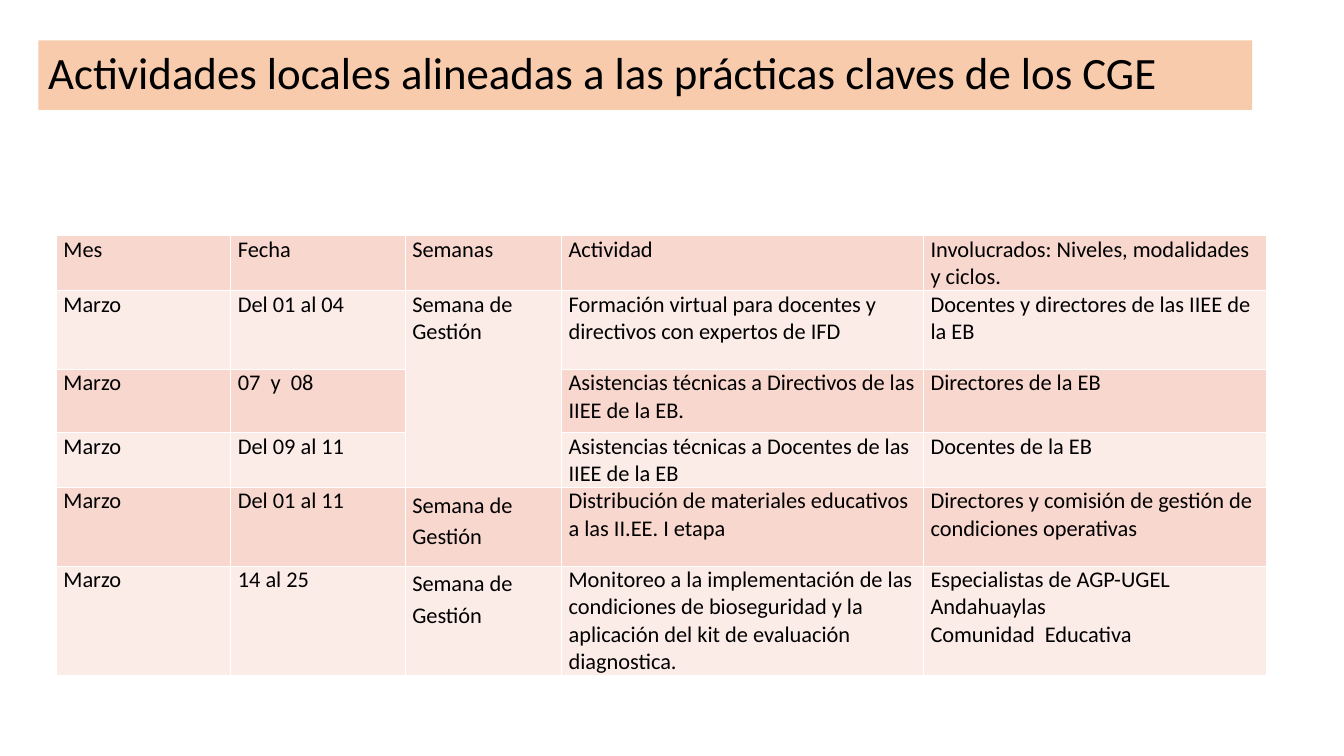
from dataclasses import dataclass

from lxml.etree import SubElement
from pptx import Presentation
from pptx.dml.color import RGBColor as RGB
from pptx.enum.shapes import MSO_SHAPE as Shape
from pptx.enum.text import MSO_ANCHOR as Anchor, PP_ALIGN as Align
from pptx.oxml.ns import qn
from pptx.slide import Slide
from pptx.table import _Cell as Cell
from pptx.text.text import TextFrame as Frame
from pptx.util import Inches, Pt

BLACK = RGB(0x00, 0x00, 0x00)
WHITE = RGB(0xFF, 0xFF, 0xFF)
PEACH = RGB(0xF8, 0xCB, 0xAD)
ROSE = RGB(0xF8, 0xD7, 0xCE)
PALE = RGB(0xFC, 0xEC, 0xE8)
FONT = "Calibri"
WIDTHS = (1.73, 1.73, 1.55, 3.59, 3.4)
WEEK = 2


@dataclass
class Row:
    height: float
    texts: tuple[str, str, str, str, str]
    lead: float | None = None


ROWS = (
    Row(0.5, ("Mes", "Fecha", "Semanas", "Actividad",
              "Involucrados: Niveles, modalidades y ciclos.")),
    Row(0.78, ("Marzo", "Del 01 al 04", "Semana de Gestión",
               "Formación virtual para docentes y directivos con expertos de IFD",
               "Docentes y directores de las IIEE de la EB")),
    Row(0.63, ("Marzo", "07  y  08", "",
               "Asistencias técnicas a Directivos de las IIEE de la EB.",
               "Directores de la EB")),
    Row(0.48, ("Marzo", "Del 09 al 11", "",
               "Asistencias técnicas a Docentes de las IIEE de la EB",
               "Docentes de la EB")),
    Row(0.78, ("Marzo", "Del 01 al 11", "Semana de Gestión",
               "Distribución de materiales educativos a las II.EE. I etapa",
               "Directores y comisión de gestión de condiciones operativas"), 1.15),
    Row(0.88, ("Marzo", "14 al 25", "Semana de Gestión",
               "Monitoreo a la implementación de las condiciones de bioseguridad "
               "y la aplicación del kit de evaluación diagnostica.",
               "Especialistas de AGP-UGEL Andahuaylas\nComunidad  Educativa"), 1.15),
)


def write(frame: Frame, text: str, size: int) -> None:
    frame.text = text
    frame.word_wrap = True
    for para in frame.paragraphs:
        para.font.size = Pt(size)
        for run in para.runs:
            run.font.name = FONT
            run.font.size = Pt(size)
            run.font.color.rgb = BLACK


def edge(cell: Cell) -> None:
    props = cell._tc.get_or_add_tcPr()
    for spot, tag in enumerate(("a:lnL", "a:lnR", "a:lnT", "a:lnB")):
        line = SubElement(props, qn(tag), w=str(Pt(1)))
        fill = SubElement(line, qn("a:solidFill"))
        SubElement(fill, qn("a:srgbClr"), val=str(WHITE))
        props.insert(spot, line)


def paint(cell: Cell, text: str, fill: RGB) -> None:
    cell.margin_left = cell.margin_right = Inches(0.07)
    cell.margin_top = cell.margin_bottom = 0
    cell.fill.solid()
    cell.fill.fore_color.rgb = fill
    edge(cell)
    write(cell.text_frame, text, 16)


def add_title(slide: Slide) -> None:
    title = slide.shapes.add_shape(
        Shape.RECTANGLE, Inches(0.38), Inches(0.4), Inches(12.04), Inches(0.69))
    title.shadow.inherit = False
    title.fill.solid()
    title.fill.fore_color.rgb = PEACH
    title.line.fill.background()
    frame = title.text_frame
    write(frame, "Actividades locales alineadas a las prácticas claves de los CGE", 32)
    frame.vertical_anchor = Anchor.MIDDLE
    frame.paragraphs[0].alignment = Align.JUSTIFY
    frame.paragraphs[0].line_spacing = 0.9


def add_plan(slide: Slide) -> None:
    table = slide.shapes.add_table(
        len(ROWS), len(WIDTHS), Inches(0.56), Inches(2.34),
        Inches(sum(WIDTHS)), Inches(sum(row.height for row in ROWS))).table
    for col, width in zip(table.columns, WIDTHS):
        col.width = Inches(width)
    for r, row in enumerate(ROWS):
        table.rows[r].height = Inches(row.height)
        for c, text in enumerate(row.texts):
            paint(table.cell(r, c), text, PALE if r % 2 else ROSE)
        if row.lead:
            table.cell(r, WEEK).text_frame.paragraphs[0].line_spacing = row.lead
    table.cell(1, WEEK).merge(table.cell(3, WEEK))


def main() -> None:
    deck = Presentation()
    deck.slide_width = Inches(13.33)
    deck.slide_height = Inches(7.5)
    slide = deck.slides.add_slide(deck.slide_layouts[6])
    add_title(slide)
    add_plan(slide)
    deck.save("out.pptx")


if __name__ == "__main__":
    main()
